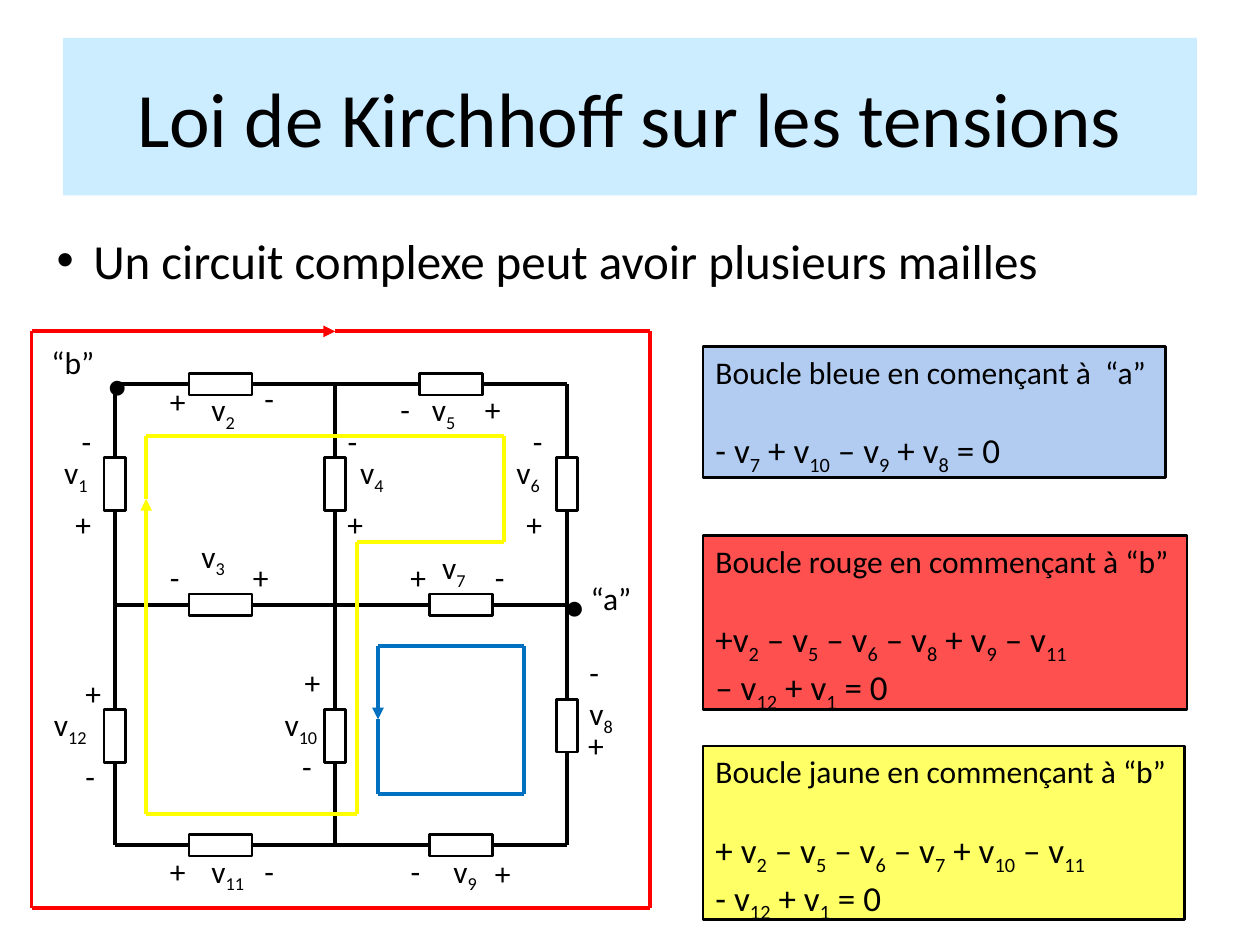
import dataclasses
import itertools

import pptx
import pptx.dml.color
import pptx.enum.shapes
import pptx.enum.text
import pptx.oxml.ns
import pptx.oxml.xmlchemy
import pptx.util

Inches = pptx.util.Inches
Pt = pptx.util.Pt
Align = pptx.enum.text.PP_ALIGN
Fit = pptx.enum.text.MSO_AUTO_SIZE


@dataclasses.dataclass(frozen=True)
class Theme:
    font: str = "Calibri"
    ink: str = "000000"
    paper: str = "FFFFFF"
    banner: str = "CCECFF"
    red: str = "FF0000"
    blue: str = "0070C0"
    yellow: str = "FFFF00"
    pale_blue: str = "B1CBF1"
    pale_red: str = "FF5050"
    pale_yellow: str = "FFFF66"
    title: int = 44
    body: int = 28
    dot: int = 24
    math: int = 20
    label: int = 18
    wire: float = 2.25
    edge: float = 1.5


def tint(code):
    return pptx.dml.color.RGBColor.from_string(code)


def write(para, text, *, font, size, ink, align=Align.LEFT, gap=0):
    """Write text in a paragraph; digits in [brackets] become subscripts."""
    para.alignment = align
    para.space_before = Pt(gap)
    for i, part in enumerate(text.replace("]", "[").split("[")):
        if not part:
            continue
        run = para.add_run()
        run.text = part
        run.font.name, run.font.size = font, Pt(size)
        run.font.color.rgb = tint(ink)
        if i % 2:
            run._r.get_or_add_rPr().set("baseline", "-25000")


class Board:
    def __init__(self, slide, theme):
        self.slide, self.theme = slide, theme

    def put(self, para, text, size, **more):
        write(para, text, font=self.theme.font, size=size, ink=self.theme.ink, **more)

    def place(self, shape, left, top, width, height):
        shape.left, shape.top = Inches(left), Inches(top)
        shape.width, shape.height = Inches(width), Inches(height)

    def title(self, text, *spot):
        shape = self.slide.shapes.title
        self.place(shape, *spot)
        shape.fill.solid()
        shape.fill.fore_color.rgb = tint(self.theme.banner)
        self.put(shape.text_frame.paragraphs[0], text, self.theme.title, align=Align.CENTER)

    def bullet(self, text, *spot):
        shape = self.slide.placeholders[1]
        self.place(shape, *spot)
        shape.text_frame.auto_size = Fit.NONE
        para = shape.text_frame.paragraphs[0]
        self.put(para, text, self.theme.body)
        props = para._p.get_or_add_pPr()
        props.set("marL", str(Inches(0.29)))
        props.set("indent", str(-Inches(0.29)))

    def box(self, fill, *spot):
        kind = pptx.enum.shapes.MSO_SHAPE.RECTANGLE
        shape = self.slide.shapes.add_shape(kind, *map(Inches, spot))
        shape.shadow.inherit = False
        shape.fill.solid()
        shape.fill.fore_color.rgb = tint(fill)
        shape.line.color.rgb = tint(self.theme.ink)
        shape.line.width = Pt(self.theme.edge)
        return shape

    def card(self, fill, spot, head, *sums):
        frame = self.box(fill, *spot).text_frame
        frame.word_wrap = False
        frame.vertical_anchor = pptx.enum.text.MSO_ANCHOR.TOP
        self.put(frame.paragraphs[0], head, self.theme.label)
        for i, text in enumerate(sums):
            gap = 0 if i else self.theme.label * 1.22
            self.put(frame.add_paragraph(), text, self.theme.math, gap=gap)

    def label(self, text, left, top, width, height=0.4, size=None):
        shape = self.slide.shapes.add_textbox(*map(Inches, (left, top, width, height)))
        frame = shape.text_frame
        frame.word_wrap = False
        frame.auto_size = Fit.SHAPE_TO_FIT_TEXT
        self.put(frame.paragraphs[0], text, size or self.theme.label)

    def line(self, start, end, ink, arrow=False):
        kind = pptx.enum.shapes.MSO_CONNECTOR.STRAIGHT
        wire = self.slide.shapes.add_connector(kind, *map(Inches, (*start, *end)))
        wire.line.color.rgb = tint(ink)
        wire.line.width = Pt(self.theme.wire)
        make = pptx.oxml.xmlchemy.OxmlElement
        if arrow:
            tip = make("a:tailEnd")
            tip.set("type", "triangle")
            wire.line._get_or_add_ln().append(tip)
        wire._element.spPr.append(make("a:effectLst"))

    def loop(self, ink, *points):
        """Closed loop whose last leg carries the arrow."""
        legs = list(itertools.pairwise((*points, points[0])))
        for leg in legs:
            self.line(*leg, ink, arrow=leg == legs[-1])


# Grid: each rail with the start of its two resistors
LONG, THIN = 0.5, 0.17
TALL = 0.42
ROWS = {3.05: (1.5, 3.33), 4.8: (1.5, 3.41), 6.71: (1.5, 3.41)}
COLS = {0.91: (3.63, 5.63), 2.66: (3.63, 5.63), 4.5: (3.63, 5.55)}

PLUS = [(1.25, 2.98), (0.5, 3.96), (3.75, 3.05), (2.66, 3.96), (4.08, 3.96),
        (4.57, 5.71), (3.83, 6.73), (1.91, 4.38), (0.58, 5.3), (1.25, 6.71),
        (3.16, 4.38), (2.32, 5.21)]
MINUS = [(0.55, 3.3), (2, 2.96), (3.08, 3.05), (4.13, 3.3), (3.83, 4.38),
         (4.58, 5.13), (3.16, 6.71), (2, 6.71), (1.25, 4.38), (0.58, 5.96),
         (2.66, 3.3), (2.3, 5.88)]
# Voltages v1 to v12, in order
VOLTS = [(0.41, 3.55), (1.58, 3.05), (1.5, 4.21), (2.76, 3.55), (3.33, 3.05),
         (4, 3.55), (3.41, 4.3), (4.58, 5.46), (3.5, 6.71), (2.16, 5.55),
         (1.58, 6.71), (0.33, 5.55)]


def spans(ends, starts, size):
    """Pieces of wire left between the resistors of one rail."""
    first, second = starts
    return [(ends[0], first), (first + size, second), (second + size, ends[1])]


def circuit(board):
    theme = board.theme
    lefts, tops = list(COLS), list(ROWS)
    for y, starts in ROWS.items():
        for a, b in spans((lefts[0], lefts[-1]), starts, LONG):
            board.line((a, y), (b, y), theme.ink)
        for x in starts:
            board.box(theme.paper, x, y - THIN / 2, LONG, THIN)
    for x, starts in COLS.items():
        for a, b in spans((tops[0], tops[-1]), starts, TALL):
            board.line((x, a), (x, b), theme.ink)
        for y in starts:
            board.box(theme.paper, x - THIN / 2, y, THIN, TALL)


def main():
    deck = pptx.Presentation()
    deck.slide_width, deck.slide_height = Inches(10), Inches(7.5)
    theme = Theme()
    board = Board(deck.slides.add_slide(deck.slide_layouts[1]), theme)

    # Title and point
    board.title("Loi de Kirchhoff sur les tensions", 0.5, 0.3, 9, 1.25)
    board.bullet("Un circuit complexe peut avoir plusieurs mailles", 0.35, 1.78, 8.07, 0.57)

    # Circuit with signs and voltages
    circuit(board)
    for spot in PLUS:
        board.label("+", *spot, 0.33)
    for spot in MINUS:
        board.label("-", *spot, 0.28)
    for n, spot in enumerate(VOLTS, 1):
        board.label(f"v[{n}]", *spot, 0.41 if n < 10 else 0.49)

    # Loops
    board.loop(theme.red, (2.66, 2.63), (5.16, 2.63), (5.16, 7.21), (0.25, 7.21), (0.25, 2.63))
    board.loop(theme.yellow, (1.16, 3.96), (1.16, 3.46), (4, 3.46), (4, 4.3),
               (2.83, 4.3), (2.83, 6.46), (1.16, 6.46))
    board.loop(theme.blue, (3, 5.71), (3, 6.3), (4.16, 6.3), (4.16, 5.13), (3, 5.13))

    # Nodes a and b
    for name, spot, dot in (("“a”", (4.59, 4.55, 0.53), (4.38, 4.55)),
                            ("“b”", (0.31, 2.67, 0.55), (0.75, 2.8))):
        board.label(name, *spot)
        board.label("•", *dot, 0.37, 0.5, theme.dot)

    # Loop sums
    board.card(theme.pale_blue, (5.58, 2.75, 3.67, 1.04), "Boucle bleue en començant à  “a”",
               "- v[7] + v[10] – v[9] + v[8] = 0")
    board.card(theme.pale_red, (5.58, 4.25, 3.84, 1.38), "Boucle rouge en commençant à “b”",
               "+v[2] – v[5] – v[6] – v[8] + v[9] – v[11]", "– v[12] + v[1] = 0")
    board.card(theme.pale_yellow, (5.58, 5.92, 3.82, 1.38), "Boucle jaune en commençant à “b”",
               "+ v[2] – v[5] – v[6] – v[7] + v[10] – v[11]", "- v[12] + v[1] = 0")

    deck.save("out.pptx")


if __name__ == "__main__":
    main()
